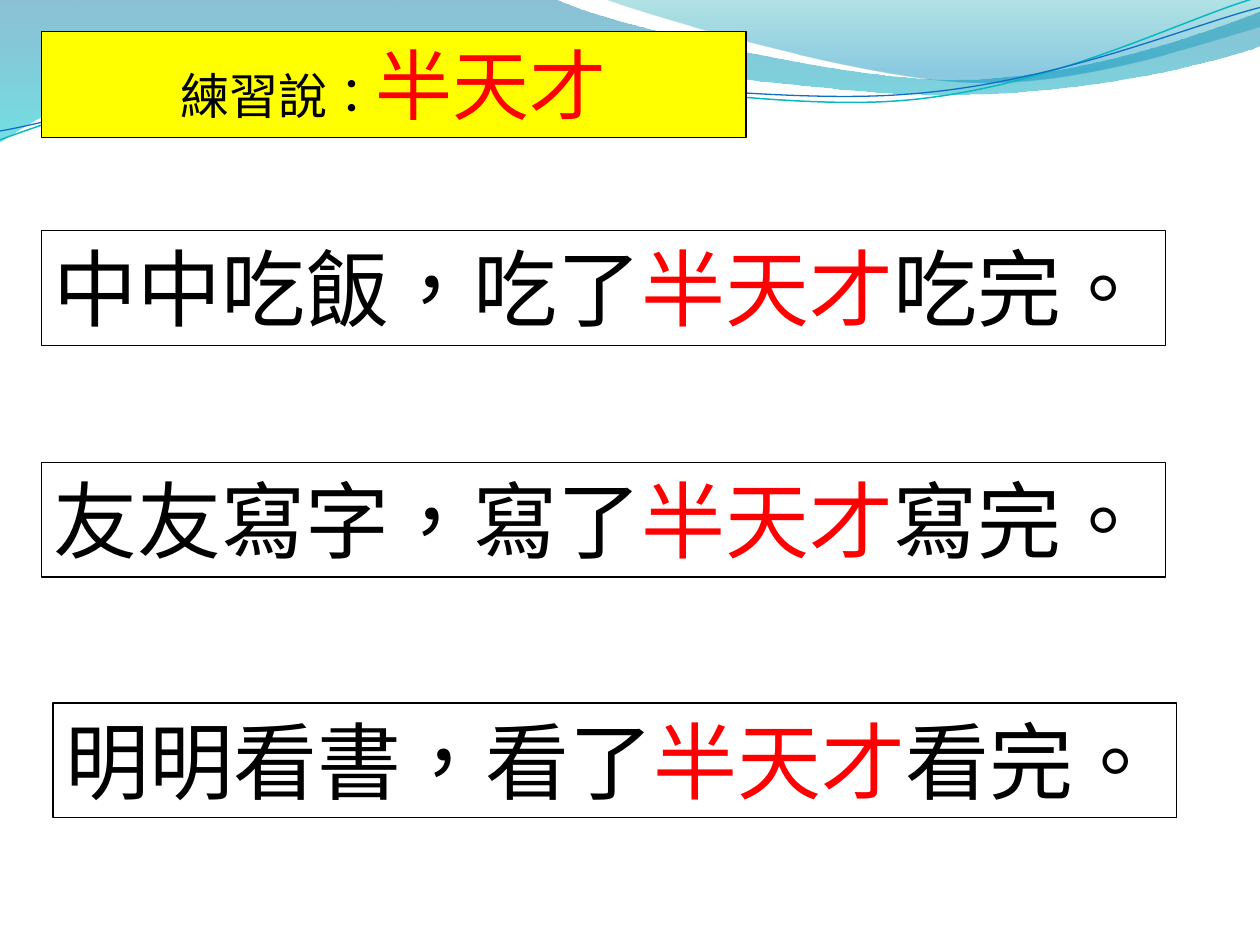
from dataclasses import dataclass
from math import cos, radians, sin

from lxml import etree
from pptx import Presentation
from pptx.dml.color import RGBColor
from pptx.enum import shapes, text
from pptx.oxml.ns import qn
from pptx.util import Inches, Pt

FONT = "Noto Sans CJK SC"
KEY = "半天才"
HEX = {
    "black": "000000", "red": "FF0000", "yellow": "FFFF00",
    "blue": "0074A1", "cyan": "00C6CF", "teal": "00A1A9", "sky": "008BBF",
    "aqua": "0AB8BF", "navy": "0F6FC6",
}
TILT = -2.7

Point = tuple[float, float]


@dataclass
class Stop:
    color: str
    place: float
    alpha: int


@dataclass
class Wave:
    """Each leg holds one point for a line or three for a Bezier curve."""
    start: Point
    legs: list[tuple[Point, ...]]
    stops: tuple[Stop, ...] = ()
    line: str = ""
    width: float = 0
    pivot: Point = (0, 0)


@dataclass
class Run:
    words: str
    size: int
    color: str = "black"


@dataclass
class Line:
    left: float
    top: float
    head: str
    tail: str


WAVES = [
    Wave((0, 0), [
        ((4.4, -0.01),),
        ((4.76, 0.17), (6.64, 0.63), (7.58, 0.63)),
        ((8.53, 0.63), (9.58, 0.26), (10, 0.09)),
        ((10.01, 0.36),),
        ((9.83, 0.44), (8.7, 0.76), (7.46, 0.75)),
        ((6.22, 0.75), (3.82, 0.28), (2.57, 0.34)),
        ((1.29, 0.36), (0.46, 0.83), (-0.01, 1.13)),
        ((0, 0),),
    ], stops=(Stop("blue", 0, 45), Stop("cyan", 1, 55))),
    Wave((4.79, -0.01), [
        ((5.09, 0.11), (6.82, 0.62), (7.69, 0.65)),
        ((8.56, 0.69), (9.61, 0.32), (10, 0.21)),
        ((10, 0),),
        ((4.79, -0.01),),
    ], stops=(Stop("teal", 0, 30), Stop("sky", 0.8, 45))),
    Wave((0, 1.11), [
        ((0.48, 0.93), (1.58, 0.57), (2.77, 0.52)),
        ((3.95, 0.47), (5.93, 0.89), (7.13, 0.8)),
        ((8.33, 0.71), (9.38, 0.15), (9.98, -0.02)),
    ], line="aqua", width=0.85, pivot=(4.99, 0.57)),
    Wave((0, 1.04), [
        ((0.47, 0.96), (1.64, 0.61), (2.83, 0.56)),
        ((4.03, 0.51), (5.97, 0.84), (7.17, 0.75)),
        ((8.36, 0.67), (9.41, 0.21), (10, 0.06)),
    ], line="navy", width=0.75, pivot=(5, 0.59)),
]
LINES = [
    Line(0.33, 1.83, "中中吃飯，吃了", "吃完。"),
    Line(0.33, 3.67, "友友寫字，寫了", "寫完。"),
    Line(0.42, 5.58, "明明看書，看了", "看完。"),
]


def rgb(name: str) -> RGBColor:
    return RGBColor.from_string(HEX[name])


def turn(dot: Point, mid: Point, angle: float) -> Point:
    x, y = dot[0] - mid[0], dot[1] - mid[1]
    c, s = cos(radians(angle)), sin(radians(angle))
    return mid[0] + x * c - y * s, mid[1] + x * s + y * c


def bend(shape, legs: list[tuple[Point, ...]]) -> None:
    """Join the three straight steps of each curved leg into one Bezier."""
    steps = iter(list(shape._element.iter(qn("a:lnTo"))))
    for leg in legs:
        group = [next(steps) for _ in leg]
        if len(group) == 1:
            continue
        curve = group[0].makeelement(qn("a:cubicBezTo"), {})
        group[0].addprevious(curve)
        for step in group:
            curve.append(step[0])
            step.getparent().remove(step)


def shade(fill, stops: tuple[Stop, ...]) -> None:
    """Give a see-through gradient that runs from top to bottom."""
    fill.gradient()
    fill.gradient_angle = 270
    for spot, stop in zip(fill.gradient_stops, stops):
        spot.color.rgb = rgb(stop.color)
        spot.position = stop.place
    for tag, stop in zip(fill._xPr.iter(qn("a:srgbClr")), stops):
        etree.SubElement(tag, qn("a:alpha"), val=str(stop.alpha * 1000))


def draw_wave(slide, wave: Wave) -> None:
    dots = [wave.start, *(dot for leg in wave.legs for dot in leg)]
    if wave.line:
        dots = [turn(dot, wave.pivot, -TILT) for dot in dots]
    first, *rest = [(Inches(x), Inches(y)) for x, y in dots]
    pen = slide.shapes.build_freeform(*first)
    pen.add_line_segments(rest, close=not wave.line)
    shape = pen.convert_to_shape()
    bend(shape, wave.legs)
    shape.shadow.inherit = False
    if wave.line:
        shape.rotation = TILT
        shape.fill.background()
        shape.line.color.rgb = rgb(wave.line)
        shape.line.width = Pt(wave.width)
    else:
        shade(shape.fill, wave.stops)
        shape.line.fill.background()


def write(shape, runs: list[Run], align) -> None:
    shape.line.color.rgb = rgb("black")
    shape.line.width = Pt(0.75)
    frame = shape.text_frame
    form = {
        "word_wrap": True,
        "auto_size": text.MSO_AUTO_SIZE.SHAPE_TO_FIT_TEXT,
        "vertical_anchor": text.MSO_ANCHOR.TOP,
    }
    for key, value in form.items():
        setattr(frame, key, value)
    para = frame.paragraphs[0]
    para.alignment = align
    for item in runs:
        run = para.add_run()
        run.text = item.words
        run.font.size = Pt(item.size)
        run.font.color.rgb = rgb(item.color)
        run.font.name = FONT
        props = run.font._element
        props.set("lang", "zh-TW")  # centres the punctuation marks
        latin = props.find(qn("a:latin"))
        latin.addnext(latin.makeelement(qn("a:ea"), {"typeface": FONT}))


def draw_title(slide) -> None:
    title = slide.shapes.title
    place = {"left": 0.33, "top": 0.25, "width": 5.59, "height": 0.84}
    for key, value in place.items():
        setattr(title, key, Inches(value))
    title.fill.solid()
    title.fill.fore_color.rgb = rgb("yellow")
    write(title, [Run("練習說：", 28), Run(KEY, 44, "red")], text.PP_ALIGN.CENTER)
    slide.shapes._spTree.append(title._element)  # in front of the waves


def draw_line(slide, line: Line) -> None:
    box = slide.shapes.add_shape(
        shapes.MSO_SHAPE.RECTANGLE, Inches(line.left), Inches(line.top),
        Inches(8.92), Inches(0.91))
    box.shadow.inherit = False
    box.fill.background()
    runs = [Run(line.head, 48), Run(KEY, 48, "red"), Run(line.tail, 48)]
    write(box, runs, text.PP_ALIGN.LEFT)


def main() -> None:
    deck = Presentation()
    deck.slide_width, deck.slide_height = Inches(10), Inches(7.5)
    slide = deck.slides.add_slide(deck.slide_layouts[5])
    for wave in WAVES:
        draw_wave(slide, wave)
    draw_title(slide)
    for line in LINES:
        draw_line(slide, line)
    deck.save("out.pptx")


if __name__ == "__main__":
    main()
